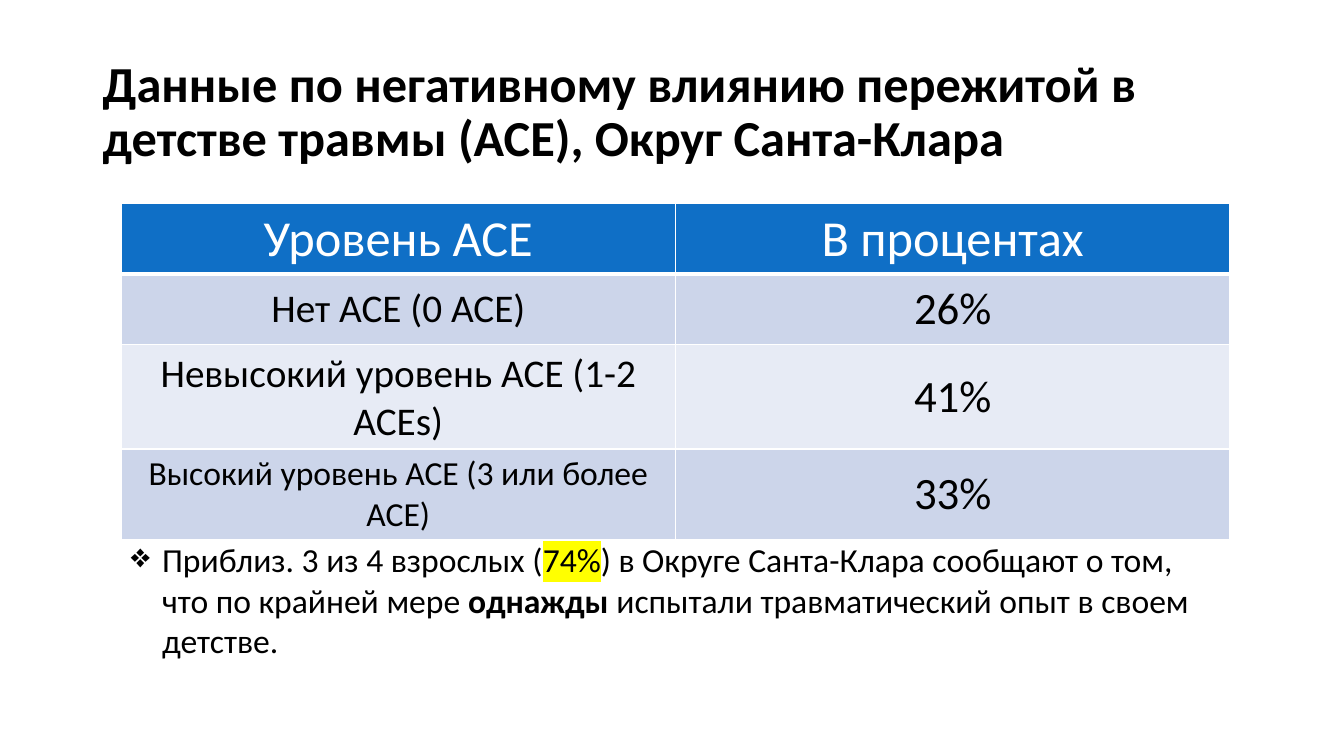
from pptx import Presentation
from pptx.dml.color import RGBColor
from pptx.enum.text import MSO_ANCHOR, MSO_AUTO_SIZE, PP_ALIGN
from pptx.oxml import parse_xml
from pptx.oxml.ns import nsdecls, qn
from pptx.util import Inches, Pt

COLORS = {
    "black": "000000",
    "white": "FFFFFF",
    "header": "0F6FC6",
    "odd": "CCD5EA",
    "even": "E7EBF5",
    "highlight": "FFFF00",
}
FONT = "Calibri"
LEVELS = [
    ("Уровень ACE", "В процентах", 36, 36, 0.7),
    ("Нет ACE (0 ACE)", "26%", 28, 32, 0.7),
    ("Невысокий уровень ACE (1-2 ACEs)", "41%", 28, 32, 1.03),
    ("Высокий уровень ACE (3 или более ACE)", "33%", 24, 32, 0.9),
]
FINDING = [
    ("Приблиз. 3 из 4 взрослых (", None),
    ("74%", "highlight"),
    (") в Округе Санта-Клара сообщают о том, что по крайней мере ", None),
    ("однажды ", "bold"),
    ("испытали травматический опыт в своем детстве.", None),
]


def style_run(r, size, color="black", bold=False):
    """Set the font of a run."""
    r.font.name = FONT
    r.font.size = Pt(size)
    r.font.bold = bold
    r.font.color.rgb = RGBColor.from_string(COLORS[color])


def add_text_frame(s, left, top, width, height):
    """Add a wrapping text box and return its text frame."""
    tf = s.shapes.add_textbox(
        Inches(left), Inches(top), Inches(width), Inches(height)).text_frame
    tf.word_wrap = True
    return tf


def add_title(s, left, top, width, height):
    """Add the slide heading, centred vertically in its box."""
    tf = add_text_frame(s, left, top, width, height)
    tf.vertical_anchor = MSO_ANCHOR.MIDDLE
    p = tf.paragraphs[0]
    p.text = ("Данные по негативному влиянию пережитой в детстве травмы (ACE), "
              "Округ Санта-Клара")
    p.line_spacing = 0.9
    style_run(p.runs[0], 36, bold=True)


def set_borders(cell, widths):
    """Draw white cell borders with the given widths in points."""
    tcPr = cell._tc.get_or_add_tcPr()
    for i, (side, width) in enumerate(widths.items()):
        tcPr.insert(i, parse_xml(
            f'<a:ln{side} {nsdecls("a")} w="{Pt(width)}"><a:solidFill>'
            f'<a:srgbClr val="{COLORS["white"]}"/></a:solidFill></a:ln{side}>'))


def add_level_table(s, left, top, width, height):
    """Add the table of ACE levels and percentages."""
    table = s.shapes.add_table(
        len(LEVELS), 2, Inches(left), Inches(top), Inches(width), Inches(height)).table
    for i, (level, percent, level_size, percent_size, row_height) in enumerate(LEVELS):
        table.rows[i].height = Inches(row_height)
        fill = "header" if i == 0 else "odd" if i % 2 else "even"
        for j, (text, size) in enumerate([(level, level_size), (percent, percent_size)]):
            cell = table.cell(i, j)
            cell.text_frame.text = text
            cell.vertical_anchor = MSO_ANCHOR.MIDDLE if i else MSO_ANCHOR.TOP
            cell.fill.solid()
            cell.fill.fore_color.rgb = RGBColor.from_string(COLORS[fill])
            p = cell.text_frame.paragraphs[0]
            p.alignment = PP_ALIGN.CENTER
            style_run(p.runs[0], size, "black" if i else "white")
            set_borders(cell, {"L": 1, "R": 1, "T": 3 if i == 1 else 1,
                               "B": 1 if i else 3})


def add_finding(s, left, top, width, height):
    """Add the bulleted finding with its highlighted share."""
    tf = add_text_frame(s, left, top, width, height)
    tf.auto_size = MSO_AUTO_SIZE.SHAPE_TO_FIT_TEXT
    p = tf.paragraphs[0]
    pPr = p._p.get_or_add_pPr()
    pPr.set("marL", str(Inches(0.31)))
    pPr.set("indent", str(-Inches(0.31)))
    pPr.append(parse_xml(f'<a:buChar {nsdecls("a")} char="❖"/>'))
    for text, emphasis in FINDING:
        r = p.add_run()
        r.text = text
        style_run(r, 24, bold=emphasis == "bold")
        if emphasis == "highlight":
            r._r.get_or_add_rPr().find(qn("a:latin")).addprevious(parse_xml(
                f'<a:highlight {nsdecls("a")}>'
                f'<a:srgbClr val="{COLORS["highlight"]}"/></a:highlight>'))


def main():
    """Build and save the slide."""
    prs = Presentation()
    prs.slide_width, prs.slide_height = Inches(13.33), Inches(7.5)
    s = prs.slides.add_slide(prs.slide_layouts[6])
    add_title(s, 0.92, 0.4, 11.5, 1.45)
    add_level_table(s, 1.2, 2.02, 11, 3.33)
    add_finding(s, 1.2, 5.3, 11, 1.31)
    prs.save("out.pptx")


if __name__ == "__main__":
    main()
